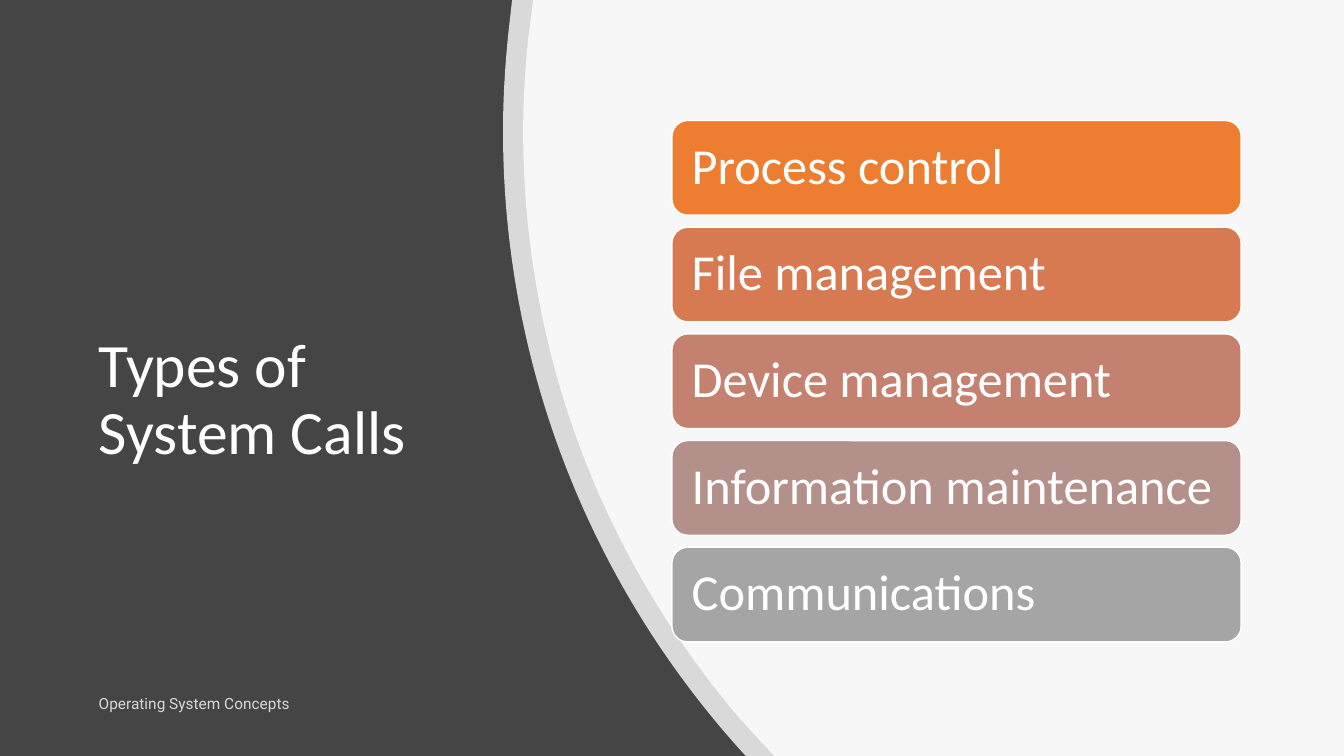
from dataclasses import dataclass

from lxml.etree import SubElement
from pptx import Presentation
from pptx.dml.color import RGBColor
from pptx.enum.shapes import MSO_SHAPE
from pptx.enum.text import MSO_ANCHOR, MSO_AUTO_SIZE, PP_ALIGN
from pptx.oxml.ns import qn
from pptx.util import Pt


@dataclass(frozen=True)
class Theme:
    dark: str = "454545"
    light: str = "FFFFFF"
    bars: tuple = ("ED7D31", "D87A51", "C48170", "B4908B", "A5A5A5")
    veil: int = 80  # opacity in percent
    font: str = "Calibri"
    footer_font: str = "Roboto"
    title_size: int = 44
    bar_size: int = 36
    footer_size: int = 11


THEME = Theme()
CALL_TYPES = ("Process control", "File management", "Device management",
              "Information maintenance", "Communications")

# Edge of each panel, in points: top, two cubic curves running upwards, bottom
OUTER_EDGE = dict(
    top=365.8, bottom=532.8, start=(530, 537),
    curves=((424, 420), (359.3, 264), (359.3, 93.6),
            (359.3, 70.6), (360.7, 48.2), (362.9, 25.9)))
INNER_EDGE = dict(
    top=380.9, bottom=553, start=(530, 515),
    curves=((432.7, 401.8), (373.7, 254.9), (373.7, 93.6),
            (373.7, 71.3), (375.1, 49.7), (377.3, 27.4)))


def paint(fill, color, opacity=100):
    fill.solid()
    fill.fore_color.rgb = RGBColor.from_string(color)
    if opacity < 100:
        clr = fill._xPr.find(".//" + qn("a:srgbClr"))
        SubElement(clr, qn("a:alpha")).set("val", str(opacity * 1000))


def set_font(p, name, size, opacity=100):
    p.font.name = name
    p.font.size = Pt(size)
    paint(p.font.fill, THEME.light, opacity)


def curve_segments(sp, first, count):
    """Turn line segments into cubic curves, three points to a curve."""
    lines = list(sp._element.iter(qn("a:lnTo")))[first:first + count]
    for i in range(0, count, 3):
        curve = lines[i]
        curve.tag = qn("a:cubicBezTo")
        for line in lines[i + 1:i + 3]:
            curve.append(line[0])
            line.getparent().remove(line)


def add_panel(s, box, top, bottom, start, curves):
    """Translucent panel with a curved left edge."""
    x, y, w, h = box
    corners = [(w, 0), (w, h), (bottom, h), start]
    builder = s.shapes.build_freeform(Pt(x + top), Pt(y))
    builder.add_line_segments([(Pt(x + px), Pt(y + py))
                               for px, py in (*corners, *curves)])
    sp = builder.convert_to_shape()
    curve_segments(sp, len(corners), len(curves))
    sp.shadow.inherit = False
    sp.line.fill.background()
    paint(sp.fill, THEME.light, THEME.veil)


def add_title(s, box, text):
    title = s.shapes.title
    title.left, title.top, title.width, title.height = map(Pt, box)
    tf = title.text_frame
    tf.text = text
    tf.word_wrap = True
    tf.auto_size = MSO_AUTO_SIZE.NONE
    tf.vertical_anchor = MSO_ANCHOR.MIDDLE
    p = tf.paragraphs[0]
    p.alignment = PP_ALIGN.LEFT
    p.line_spacing = 0.9
    set_font(p, THEME.font, THEME.title_size)


def add_footer(s, box, text):
    tf = s.shapes.add_textbox(*map(Pt, box)).text_frame
    tf.text = text
    tf.word_wrap = True
    tf.vertical_anchor = MSO_ANCHOR.MIDDLE
    p = tf.paragraphs[0]
    p.space_after = Pt(6)
    set_font(p, THEME.footer_font, THEME.footer_size, THEME.veil)


def add_bars(s, box, labels, gap=8.6):
    """Equal rounded bars stacked to fill the box."""
    x, y, w, h = box
    bar_h = (h - gap * (len(labels) - 1)) / len(labels)
    for i, (label, color) in enumerate(zip(labels, THEME.bars)):
        sp = s.shapes.add_shape(MSO_SHAPE.ROUNDED_RECTANGLE, Pt(x),
                                Pt(y + i * (bar_h + gap)), Pt(w), Pt(bar_h))
        sp.shadow.inherit = False
        paint(sp.fill, color)
        paint(sp.line.fill, THEME.light)
        sp.line.width = Pt(1)
        tf = sp.text_frame
        tf.text = label
        tf.word_wrap = True
        tf.vertical_anchor = MSO_ANCHOR.MIDDLE
        tf.margin_left = tf.margin_right = Pt(10.8)
        p = tf.paragraphs[0]
        p.alignment = PP_ALIGN.LEFT
        p.line_spacing = 0.9
        set_font(p, THEME.font, THEME.bar_size)


def main():
    prs = Presentation()
    prs.slide_width, prs.slide_height = Pt(960), Pt(540)
    s = prs.slides.add_slide(prs.slide_layouts[5])
    paint(s.background.fill, THEME.dark)

    # Curved panels
    for edge in (OUTER_EDGE, INNER_EDGE):
        add_panel(s, (0, 0, 960, 540), **edge)

    # Title and footer
    add_title(s, (63.4, 110, 282, 353), "Types of System Calls")
    add_footer(s, (63.4, 488, 394, 29), "Operating System Concepts")

    # System call types
    add_bars(s, (480, 86.1, 406.6, 372.4), CALL_TYPES)

    prs.save("out.pptx")


if __name__ == "__main__":
    main()
